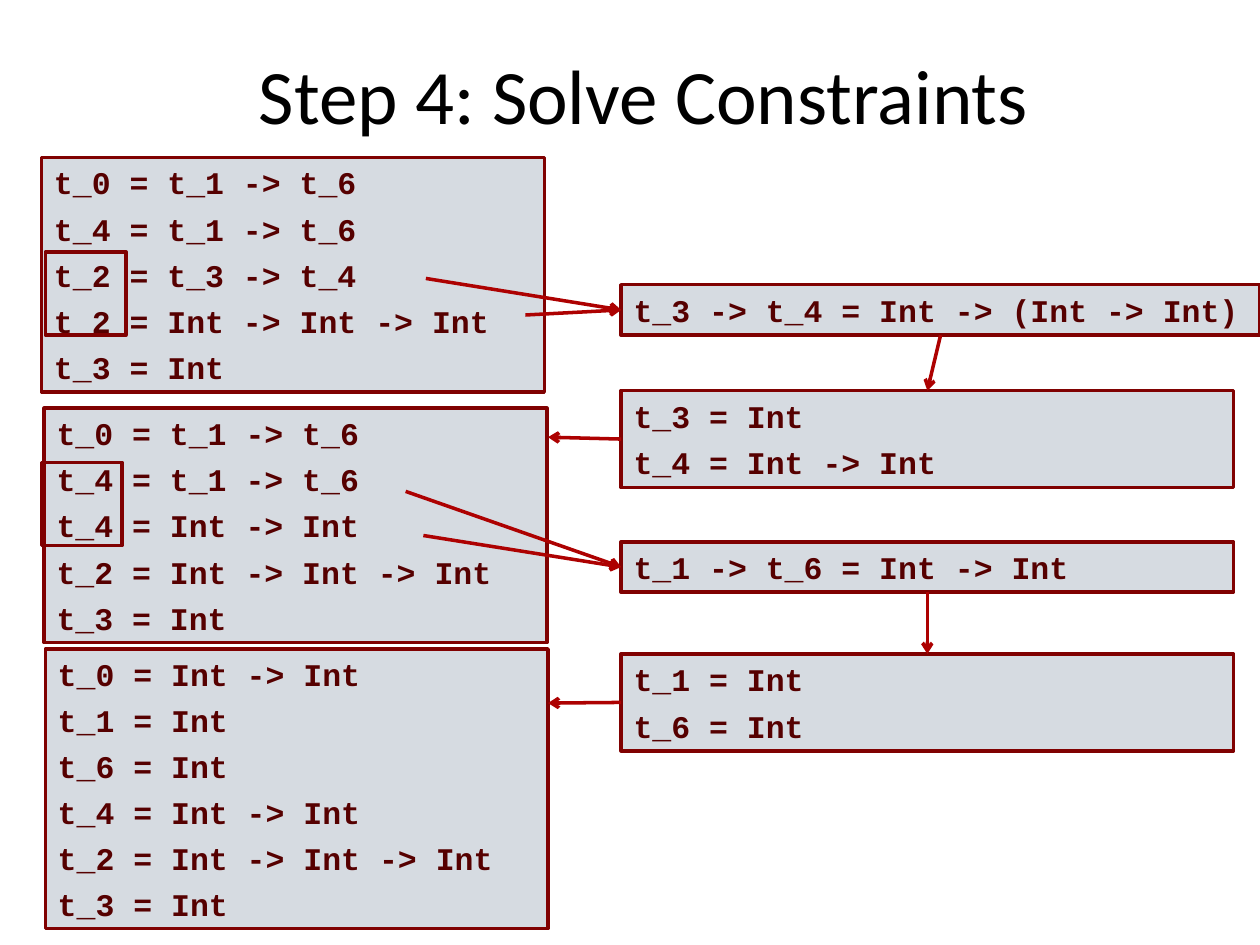
from dataclasses import dataclass

from lxml import etree
from pptx import Presentation
from pptx.dml.color import RGBColor
from pptx.enum import shapes, text
from pptx.oxml import ns
from pptx.util import Inches, Pt

TOP, LEFT, BOTTOM = 0, 1, 2  # connection sites of a rectangle


@dataclass(frozen=True)
class Theme:
    title_font: str = "Calibri"
    code_font: str = "Courier New"
    title_size: float = 44
    code_size: float = 18
    code_gap: float = 4.75
    line_width: float = 2
    title: RGBColor = RGBColor(0, 0, 0)
    code: RGBColor = RGBColor(0x56, 0, 0)
    panel: RGBColor = RGBColor(0xD6, 0xDB, 0xE1)
    border: RGBColor = RGBColor(0x80, 0x01, 0x01)
    arrow: RGBColor = RGBColor(0xAD, 0x01, 0x01)


THEME = Theme()
PANEL_HEIGHTS = {1: 0.4, 2: 0.77, 5: 1.86, 6: 2.22}  # by number of code lines


def style_font(paragraph, name, size, color, bold=False):
    for run in paragraph.runs:
        run.font.name = name
        run.font.size = Pt(size)
        run.font.color.rgb = color
        run.font.bold = bold


def set_title(slide, wording):
    title = slide.shapes.title
    title.left, title.top = Inches(0.61), Inches(0.23)
    title.width, title.height = Inches(9), Inches(1.02)
    frame = title.text_frame
    frame.text = wording
    frame.vertical_anchor = text.MSO_ANCHOR.MIDDLE
    frame.paragraphs[0].alignment = text.PP_ALIGN.CENTER
    style_font(frame.paragraphs[0], THEME.title_font, THEME.title_size, THEME.title)


def add_outlined_box(slide, left, top, width, height):
    box = slide.shapes.add_shape(
        shapes.MSO_SHAPE.RECTANGLE,
        Inches(left), Inches(top), Inches(width), Inches(height))
    box.shadow.inherit = False
    box.fill.background()
    box.line.color.rgb = THEME.border
    box.line.width = Pt(THEME.line_width)
    return box


def add_constraints(slide, left, top, width, *lines):
    panel = add_outlined_box(slide, left, top, width, PANEL_HEIGHTS[len(lines)])
    panel.fill.solid()
    panel.fill.fore_color.rgb = THEME.panel
    frame = panel.text_frame
    frame.text = "\n".join(lines)
    frame.word_wrap = True
    frame.vertical_anchor = text.MSO_ANCHOR.MIDDLE
    frame.auto_size = text.MSO_AUTO_SIZE.SHAPE_TO_FIT_TEXT
    for paragraph in frame.paragraphs:
        paragraph.alignment = text.PP_ALIGN.LEFT
        paragraph.space_before = Pt(THEME.code_gap)
        style_font(paragraph, THEME.code_font, THEME.code_size, THEME.code, bold=True)
    return panel


def add_arrow(slide, start, end):
    """Each end is a point in inches or a (panel, site) pair."""
    arrow = slide.shapes.add_connector(shapes.MSO_CONNECTOR.STRAIGHT, 0, 0, 0, 0)
    if hasattr(start[0], "shape_id"):
        arrow.begin_connect(*start)
    else:
        arrow.begin_x, arrow.begin_y = map(Inches, start)
    if hasattr(end[0], "shape_id"):
        arrow.end_connect(*end)
    else:
        arrow.end_x, arrow.end_y = map(Inches, end)
    arrow.line.color.rgb = THEME.arrow
    arrow.line.width = Pt(THEME.line_width)
    etree.SubElement(arrow.line._get_or_add_ln(), ns.qn("a:tailEnd"), type="arrow")
    etree.SubElement(arrow._element.spPr, ns.qn("a:effectLst"))


def main():
    prs = Presentation()
    prs.slide_width, prs.slide_height = Inches(10), Inches(7.5)
    slide = prs.slides.add_slide(prs.slide_layouts[5])
    set_title(slide, "Step 4: Solve Constraints")

    # Constraint sets on the left, unification steps on the right
    set_width, step_left, step_width = 3.99, 4.93, 4.86
    add_constraints(slide, 0.33, 1.25, set_width,
                    "t_0 = t_1 -> t_6", "t_4 = t_1 -> t_6", "t_2 = t_3 -> t_4",
                    "t_2 = Int -> Int -> Int", "t_3 = Int")
    unify_t2 = add_constraints(slide, step_left, 2.26, 5.07,
                               "t_3 -> t_4 = Int -> (Int -> Int)")
    solved_t3_t4 = add_constraints(slide, step_left, 3.1, step_width,
                                   "t_3 = Int", "t_4 = Int -> Int")
    add_constraints(slide, 0.35, 3.24, set_width,
                    "t_0 = t_1 -> t_6", "t_4 = t_1 -> t_6", "t_4 = Int -> Int",
                    "t_2 = Int -> Int -> Int", "t_3 = Int")
    unify_t4 = add_constraints(slide, step_left, 4.3, step_width,
                               "t_1 -> t_6 = Int -> Int")
    solved_t1_t6 = add_constraints(slide, step_left, 5.19, step_width,
                                   "t_1 = Int", "t_6 = Int")
    add_constraints(slide, 0.36, 5.15, set_width,
                    "t_0 = Int -> Int", "t_1 = Int", "t_6 = Int",
                    "t_4 = Int -> Int", "t_2 = Int -> Int -> Int", "t_3 = Int")

    # Matching pair -> unification -> solution -> next constraint set
    rounds = [
        (((3.38, 2.21), (4.17, 2.5)), unify_t2, solved_t3_t4, (4.35, 3.47)),
        (((3.22, 3.9), (3.36, 4.25)), unify_t4, solved_t1_t6, (4.35, 5.58)),
    ]
    for pair, unify, solved, next_set in rounds:
        for constraint in pair:
            add_arrow(slide, constraint, (unify, LEFT))
        add_arrow(slide, (unify, BOTTOM), (solved, TOP))
        add_arrow(slide, (solved, LEFT), next_set)

    # Frames around the repeated variables
    for left, top in ((0.36, 2), (0.33, 3.67)):
        add_outlined_box(slide, left, top, 0.64, 0.66)

    prs.save("out.pptx")


if __name__ == "__main__":
    main()
